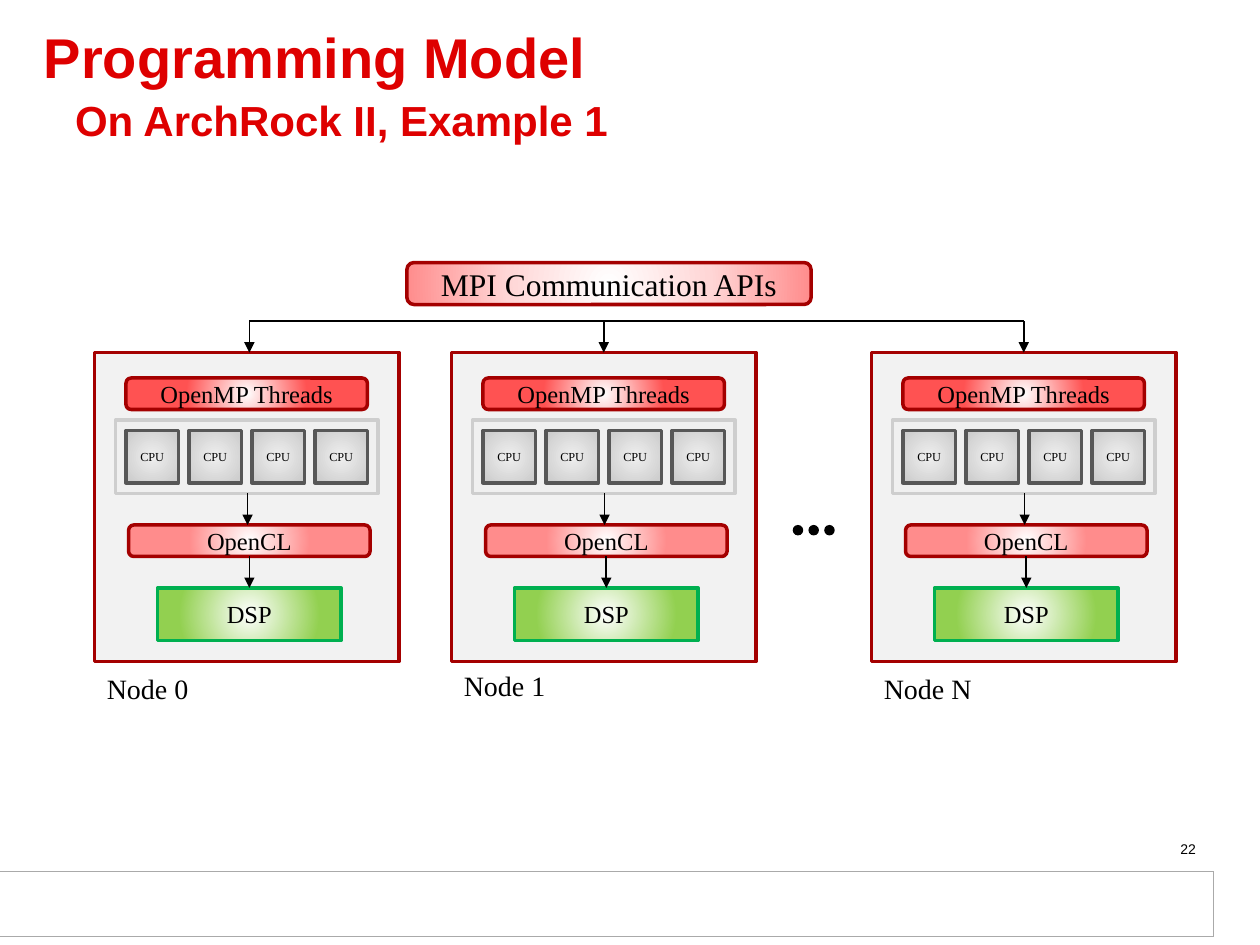
from lxml import etree
from pptx import Presentation
from pptx.dml.color import RGBColor
from pptx.enum.shapes import MSO_CONNECTOR as Connector, MSO_SHAPE as Shape
from pptx.enum.text import MSO_ANCHOR as Anchor, PP_ALIGN as Align
from pptx.oxml import parse_xml
from pptx.oxml.ns import nsdecls, qn
from pptx.util import Pt

SERIF, SANS = "Times New Roman", "Arial"

BLACK = RGBColor(0x00, 0x00, 0x00)
WHITE = RGBColor(0xFF, 0xFF, 0xFF)
TITLE_RED = RGBColor(0xDE, 0x00, 0x00)
DARK_RED = RGBColor(0xA4, 0x00, 0x00)
RED = RGBColor(0xFF, 0x52, 0x52)
PINK = RGBColor(0xFF, 0x8C, 0x8C)
PALE_PINK = RGBColor(0xFF, 0xD6, 0xD6)
GREEN = RGBColor(0x00, 0xB0, 0x50)
LIME = RGBColor(0x92, 0xD0, 0x50)
PANEL_GRAY = RGBColor(0xF2, 0xF2, 0xF2)
PALE_GRAY = RGBColor(0xEF, 0xEF, 0xEF)
SILVER = RGBColor(0xCE, 0xCE, 0xCE)
DARK_GRAY = RGBColor(0x57, 0x57, 0x57)
RULE_GRAY = RGBColor(0xAA, 0xAA, 0xAA)

# Radial gradients: (percent from the centre, colour)
CPU_GLOW = [(0, PALE_GRAY), (89, SILVER), (100, SILVER)]
THREADS_GLOW = [(0, WHITE), (50, RED), (100, RED)]
OPENCL_GLOW = [(0, WHITE), (50, PINK), (100, PINK)]
DSP_GLOW = [(0, WHITE), (74, LIME), (100, LIME)]
MPI_GLOW = [(0, WHITE), (50, PALE_PINK), (100, PINK)]

# Label, left edge, label top, x of the arrow from the bus
NODES = [
    ("Node 0", 54, 380, 142.5),
    ("Node 1", 258, 378.5, 345),
    ("Node N", 498, 380, 585),
]
BUS_TOP, NODE_TOP = 183.5, 201.5


def fill_radial(shape, stops):
    stop_xml = "".join(
        f'<a:gs pos="{percent * 1000}"><a:srgbClr val="{color}"/></a:gs>'
        for percent, color in stops
    )
    shape._element.spPr.append(parse_xml(
        f'<a:gradFill {nsdecls("a")} rotWithShape="1"><a:gsLst>{stop_xml}</a:gsLst>'
        '<a:path path="circle"><a:fillToRect l="50000" t="50000" r="50000" b="50000"/>'
        "</a:path></a:gradFill>"
    ))


def set_font(paragraph, name, size, color, bold=False):
    font = paragraph.font
    font.name, font.size, font.bold = name, Pt(size), bold
    font.color.rgb = color


def add_box(slide, kind, left, top, width, height, fill, line=None):
    """Add a shape; fill is one colour or a list of radial gradient stops."""
    shape = slide.shapes.add_shape(kind, Pt(left), Pt(top), Pt(width), Pt(height))
    if isinstance(fill, list):
        fill_radial(shape, fill)
    else:
        shape.fill.solid()
        shape.fill.fore_color.rgb = fill
    if line is None:
        shape.line.fill.background()
    else:
        shape.line.color.rgb = line
        shape.line.width = Pt(2)
    shape.shadow.inherit = False
    return shape


def add_block(slide, kind, left, top, width, height, fill, line, text, size):
    """Add a box with a centred caption."""
    frame = add_box(slide, kind, left, top, width, height, fill, line).text_frame
    frame.margin_left = frame.margin_right = 0
    frame.margin_top = frame.margin_bottom = 0
    frame.vertical_anchor = Anchor.MIDDLE
    paragraph = frame.paragraphs[0]
    paragraph.text = text
    paragraph.alignment = Align.CENTER
    set_font(paragraph, SERIF, size, BLACK)


def add_line(slide, start, end, color=BLACK, width=1, arrow=False):
    line = slide.shapes.add_connector(
        Connector.STRAIGHT, *(Pt(value) for value in (*start, *end)))
    line.line.color.rgb = color
    line.line.width = Pt(width)
    if arrow:
        etree.SubElement(line.line._get_or_add_ln(), qn("a:tailEnd"), type="triangle")
    etree.SubElement(line._element.spPr, qn("a:effectLst"))


def add_text(slide, left, top, width, height, text, name, size, align=Align.LEFT):
    box = slide.shapes.add_textbox(Pt(left), Pt(top), Pt(width), Pt(height))
    box.text_frame.word_wrap = True
    paragraph = box.text_frame.paragraphs[0]
    paragraph.text = text
    paragraph.alignment = align
    set_font(paragraph, name, size, BLACK)


def add_title(slide):
    box = slide.shapes.add_textbox(Pt(18), Pt(11.5), Pt(666), Pt(78.5))
    frame = box.text_frame
    frame.word_wrap = True
    frame.vertical_anchor = Anchor.MIDDLE
    title, subtitle = frame.paragraphs[0], frame.add_paragraph()
    title.text = "Programming Model"
    subtitle.text = "On ArchRock II, Example 1"
    subtitle.space_before = Pt(7)
    subtitle._p.get_or_add_pPr().set("marL", str(Pt(17.8)))
    for paragraph, size in ((title, 32), (subtitle, 24)):
        paragraph.line_spacing = 0.85
        set_font(paragraph, SANS, size, TITLE_RED, bold=True)


def add_node(slide, label, left, label_top, drop_x):
    add_box(slide, Shape.RECTANGLE, left, NODE_TOP, 174, 176.5, PANEL_GRAY, DARK_RED)
    cluster = add_box(slide, Shape.RECTANGLE, left + 12, 240, 150, 42, PALE_GRAY, SILVER)
    color = cluster._element.spPr.find(qn("a:solidFill"))[0]
    etree.SubElement(color, qn("a:alpha"), val="44000")
    for index in range(4):
        add_block(slide, Shape.RECTANGLE, left + 18 + 36 * index, 246, 30, 30,
                  CPU_GLOW, DARK_GRAY, "CPU", 7)
    add_block(slide, Shape.ROUNDED_RECTANGLE, left + 18, 216, 138, 18,
              THREADS_GLOW, DARK_RED, "OpenMP Threads", 14)
    add_block(slide, Shape.RECTANGLE, left + 36, 336, 105, 30,
              DSP_GLOW, GREEN, "DSP", 14)
    add_block(slide, Shape.ROUNDED_RECTANGLE, left + 19.5, 300, 138, 18,
              OPENCL_GLOW, DARK_RED, "OpenCL", 14)
    add_line(slide, (left + 87.5, 282), (left + 87.5, 300), arrow=True)
    add_line(slide, (left + 88.5, 318), (left + 88.5, 336), arrow=True)
    add_line(slide, (drop_x, BUS_TOP), (drop_x, NODE_TOP), arrow=True)
    add_text(slide, left, label_top, 72, 26.5, label, SERIF, 16)


def add_footer(slide):
    right, top, bottom = 693.5, 498, 535
    for start, end in (((0, bottom), (right, bottom)),
                       ((0, top), (right, top)),
                       ((right, top), (right, bottom))):
        add_line(slide, start, end, RULE_GRAY, 0.75)
    add_text(slide, 522.5, 476.5, 168, 16.5, "22", SANS, 8, Align.RIGHT)


def main():
    presentation = Presentation()
    presentation.slide_width, presentation.slide_height = Pt(720), Pt(540)
    slide = presentation.slides.add_slide(presentation.slide_layouts[6])
    add_footer(slide)
    add_title(slide)
    add_block(slide, Shape.ROUNDED_RECTANGLE, 232.5, 150, 231, 24,
              MPI_GLOW, DARK_RED, "MPI Communication APIs", 18)
    add_line(slide, (NODES[0][-1], BUS_TOP), (NODES[-1][-1], BUS_TOP))
    for node in NODES:
        add_node(slide, *node)
    for index in range(3):
        add_box(slide, Shape.OVAL, 453 + 9 * index, 300, 6, 6, BLACK)
    presentation.save("out.pptx")


if __name__ == "__main__":
    main()
